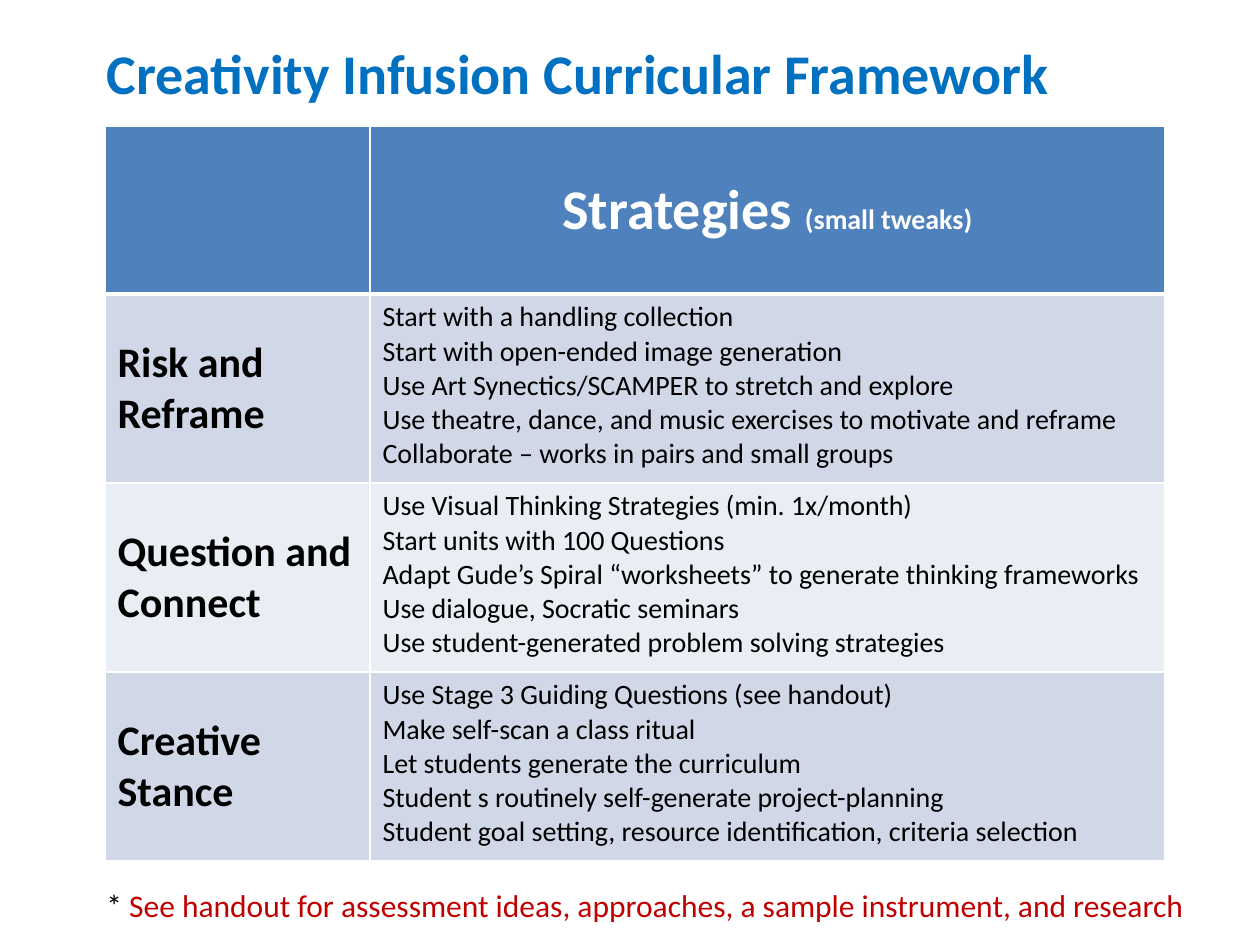
from lxml.etree import SubElement
from pptx import Presentation
from pptx.dml.color import RGBColor
from pptx.enum.text import MSO_ANCHOR as Anchor, PP_ALIGN as Align
from pptx.oxml.ns import qn
from pptx.util import Pt

EMU_PER_PX = 914400 / 126
COLORS = {
    "title": "0070C0", "header": "4F81BD", "band_dark": "D0D8E8",
    "band_light": "E9EDF4", "white": "FFFFFF", "black": "000000", "note": "C00000",
}
STRATEGIES = [
    ("Risk and Reframe", [
        "Start with a handling collection",
        "Start with open-ended image generation",
        "Use Art Synectics/SCAMPER to stretch and explore",
        "Use theatre, dance, and music exercises to motivate and reframe",
        "Collaborate – works in pairs and small groups",
    ]),
    ("Question and Connect", [
        "Use Visual Thinking Strategies (min. 1x/month)",
        "Start units with 100 Questions",
        "Adapt Gude’s Spiral “worksheets” to generate thinking frameworks",
        "Use dialogue, Socratic seminars",
        "Use student-generated problem solving strategies",
    ]),
    ("Creative Stance", [
        "Use Stage 3 Guiding Questions (see handout)",
        "Make self-scan a class ritual",
        "Let students generate the curriculum",
        "Student s routinely self-generate project-planning",
        "Student goal setting, resource identification, criteria selection",
    ]),
]


def px(*lengths):
    return [round(length * EMU_PER_PX) for length in lengths]


def add_run(paragraph, text, size, color, bold=False):
    run = paragraph.add_run()
    run.text = text
    run.font.name = "Calibri"
    run.font.size = Pt(size)
    run.font.bold = bold
    run.font.color.rgb = RGBColor.from_string(COLORS[color])


presentation = Presentation()
presentation.slide_width, presentation.slide_height = px(1260, 945)
slide = presentation.slides.add_slide(presentation.slide_layouts[5])

# Title
title = slide.shapes.title
title.left, title.top, title.width, title.height = px(94, 32, 976, 80)
title.text_frame.word_wrap = False
title.text_frame.vertical_anchor = Anchor.MIDDLE
paragraph = title.text_frame.paragraphs[0]
paragraph.alignment = Align.LEFT
add_run(paragraph, "Creativity Infusion Curricular Framework", 32, "title", True)

# Strategy table
column_widths = px(265, 795)
row_heights = px(168, 189, 189, 189)
table = slide.shapes.add_table(4, 2, *px(105, 126, 1060, 735)).table
for column, width in zip(table.columns, column_widths):
    column.width = width
for row, height in zip(table.rows, row_heights):
    row.height = height

# Cell borders and fills: a thick rule separates the header from the body
for row_index, row in enumerate(table.rows):
    fill_name = "header" if row_index == 0 else ("band_light", "band_dark")[row_index % 2]
    for cell in row.cells:
        properties = cell._tc.get_or_add_tcPr()
        for side in "LRTB":
            thick = (row_index, side) in ((0, "B"), (1, "T"))
            line = SubElement(properties, qn(f"a:ln{side}"), w=str(Pt(3 if thick else 1)))
            line_fill = SubElement(line, qn("a:solidFill"))
            SubElement(line_fill, qn("a:srgbClr"), val=COLORS["white"])
        cell.fill.solid()
        cell.fill.fore_color.rgb = RGBColor.from_string(COLORS[fill_name])

# Header text
header = table.cell(0, 1)
header.vertical_anchor = Anchor.MIDDLE
paragraph = header.text_frame.paragraphs[0]
paragraph.alignment = Align.CENTER
add_run(paragraph, "Strategies ", 32, "white", True)
add_run(paragraph, "(small tweaks)", 16, "white", True)

# Body text
for row_index, (theme, strategies) in enumerate(STRATEGIES, start=1):
    theme_cell = table.cell(row_index, 0)
    theme_cell.vertical_anchor = Anchor.MIDDLE
    add_run(theme_cell.text_frame.paragraphs[0], theme, 24, "black", True)
    text_frame = table.cell(row_index, 1).text_frame
    for index, strategy in enumerate(strategies):
        paragraph = text_frame.add_paragraph() if index else text_frame.paragraphs[0]
        add_run(paragraph, strategy, 16, "black")

# Handout note
note = slide.shapes.add_textbox(*px(94, 880, 1116, 51))
note.text_frame.word_wrap = False
paragraph = note.text_frame.paragraphs[0]
add_run(paragraph, "* ", 18, "black")
add_run(paragraph, "See handout for assessment ideas, approaches, a sample instrument, and research",
        18, "note")

presentation.save("out.pptx")
